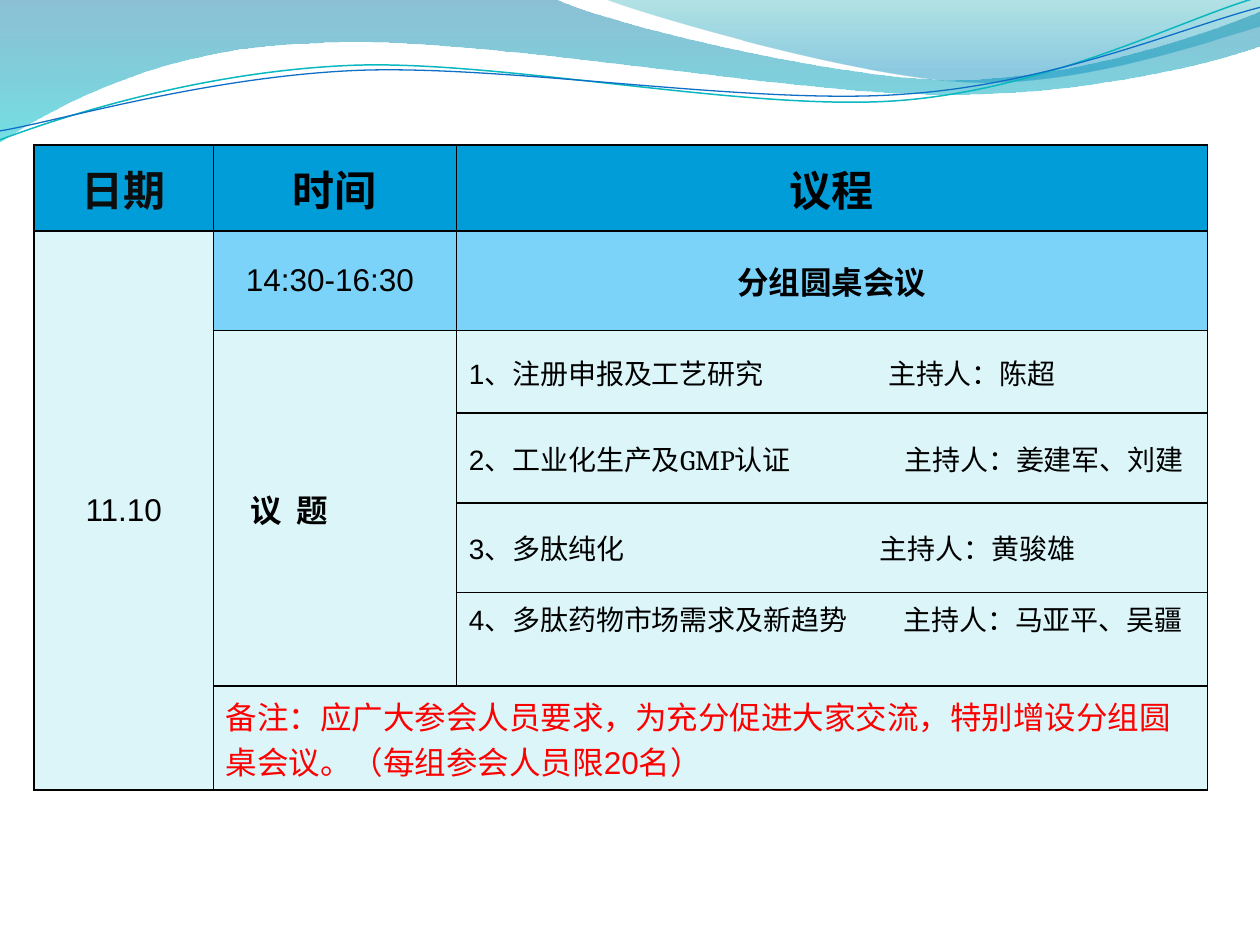
from dataclasses import dataclass

from lxml.etree import SubElement
from pptx import Presentation
from pptx.dml.color import RGBColor as Color
from pptx.enum.text import MSO_ANCHOR as Anchor, PP_ALIGN as Align
from pptx.oxml.ns import qn
from pptx.util import Cm, Pt


@dataclass(frozen=True)
class Theme:
    """Colours, fonts and type sizes of the slide."""
    header: str = "009DD9"
    session: str = "7CD3FA"
    body: str = "DBF5F9"
    text: str = "000000"
    date_text: str = "0D0D0D"
    note_text: str = "FF0000"
    sans: str = "Arial"
    serif: str = "Cambria"
    header_size: int = 24
    body_size: int = 18
    topic_size: int = 16


THEME = Theme()

HEADERS = [("日期", THEME.date_text), ("时间", THEME.text), ("议程", THEME.text)]
DATE, TIME, SESSION, TOPIC_LABEL = "11.10", "14:30-16:30", "分组圆桌会议", "议  题"
TOPICS = [
    ("1、", "注册申报及工艺研究", "陈超", 8.45),
    ("2、", "工业化生产及GMP认证", "姜建军、刘建", 8.78),
    ("3、", "多肽纯化", "黄骏雄", 8.28),
    ("4、", "多肽药物市场需求及新趋势", "马亚平、吴疆", 8.76),
]
NOTE = "备注：应广大参会人员要求，为充分促进大家交流，特别增设分组圆桌会议。（每组参会人员限20名）"

TABLE_LEFT, TABLE_TOP = 0.69, 2.92
COLUMNS = [3.61, 4.9, 15.14]
ROWS = [1.74, 2, 1.67, 1.81, 1.8, 1.89, 2.1]
MERGES = [((1, 0), (6, 0)), ((2, 1), (5, 1)), ((6, 1), (6, 2))]

BANDS = [
    ([(0, 0), (11.18, -0.03), (12.09, 0.43, 16.87, 1.6, 19.25, 1.6),
      (21.67, 1.6, 24.33, 0.66, 25.4, 0.23), (25.43, 0.91),
      (24.97, 1.12, 22.1, 1.93, 18.95, 1.9), (15.8, 1.9, 9.7, 0.71, 6.53, 0.86),
      (3.28, 0.91, 1.17, 2.11, -0.03, 2.87)],
     [(0, "0074A1", 45), (1, "00C6CF", 55)]),
    ([(12.17, -0.03), (12.93, 0.28, 17.32, 1.57, 19.53, 1.65),
      (21.74, 1.75, 24.41, 0.81, 25.4, 0.53), (25.4, 0)],
     [(0, "00A1A9", 30), (0.8, "008BBF", 45)]),
]
STRANDS = [
    ([(0, 2.82), (1.22, 2.36, 4.01, 1.45, 7.04, 1.32),
      (10.03, 1.19, 15.06, 2.26, 18.11, 2.03), (21.16, 1.8, 23.83, 0.38, 25.35, -0.05)],
     "0AB8BF", 0.85),
    ([(0, 2.64), (1.19, 2.44, 4.17, 1.55, 7.19, 1.42),
      (10.24, 1.3, 15.16, 2.13, 18.21, 1.9), (21.23, 1.7, 23.9, 0.53, 25.4, 0.15)],
     "0F6FC6", 0.75),
]


def add_wave(slide, segments, close):
    points = [(Cm(x), Cm(y)) for segment in segments
              for x, y in zip(segment[::2], segment[1::2])]
    builder = slide.shapes.build_freeform(*points[0])
    builder.add_line_segments(points[1:], close=close)
    shape = builder.convert_to_shape()
    shape.shadow.inherit = False
    lines = iter(list(shape.element.iter(qn("a:lnTo"))))
    for segment in segments[1:]:
        first = next(lines)
        if len(segment) == 6:
            first.tag = qn("a:cubicBezTo")
            for line in (next(lines), next(lines)):
                first.append(line[0])
                line.getparent().remove(line)
    return shape


def add_band(slide, segments, stops):
    shape = add_wave(slide, segments, True)
    shape.line.fill.background()
    shape.fill.gradient()
    shape.fill.gradient_angle = 270
    for stop, (position, color, opacity) in zip(shape.fill.gradient_stops, stops):
        stop.position = position
        stop.color.rgb = Color.from_string(color)
    for element, (_, _, opacity) in zip(shape.element.iter(qn("a:srgbClr")), stops):
        SubElement(element, qn("a:alpha"), val=str(opacity * 1000))


def add_strand(slide, segments, color, width):
    shape = add_wave(slide, segments, False)
    shape.fill.background()
    shape.line.color.rgb = Color.from_string(color)
    shape.line.width = Pt(width)


def add_borders(cell):
    properties = cell._tc.get_or_add_tcPr()
    for side in ("lnL", "lnR", "lnT", "lnB"):
        line = SubElement(properties, qn(f"a:{side}"), w=str(Pt(1)))
        fill = SubElement(line, qn("a:solidFill"))
        SubElement(fill, qn("a:srgbClr"), val=THEME.text)


def write(cell, runs, size, color=THEME.text, bold=False, align=Align.LEFT):
    cell.vertical_anchor = Anchor.MIDDLE
    paragraph = cell.text_frame.paragraphs[0]
    paragraph.alignment = align
    font = paragraph.font
    font.size, font.bold = Pt(size), bold
    font.color.rgb = Color.from_string(color)
    if len(runs) == 1:
        font.name = runs[0][1]
    for text, name in runs:
        run = paragraph.add_run()
        run.text = text
        if len(runs) > 1:
            run.font.name = name
    return paragraph


def add_tab(paragraph, position):
    properties = paragraph._p.get_or_add_pPr()
    tabs = SubElement(properties, qn("a:tabLst"))
    SubElement(tabs, qn("a:tab"), pos=str(Cm(position)), algn="l")
    properties.find(qn("a:defRPr")).addprevious(tabs)


def add_agenda(slide):
    frame = slide.shapes.add_table(len(ROWS), len(COLUMNS), Cm(TABLE_LEFT), Cm(TABLE_TOP),
                                   Cm(sum(COLUMNS)), Cm(sum(ROWS)))
    table = frame.table
    table.first_row = table.horz_banding = False
    for column, width in zip(table.columns, COLUMNS):
        column.width = Cm(width)
    for row, height in zip(table.rows, ROWS):
        row.height = Cm(height)
    for row in range(len(ROWS)):
        for column in range(len(COLUMNS)):
            cell = table.cell(row, column)
            add_borders(cell)
            color = (THEME.header if row == 0 else
                     THEME.session if row == 1 and column else THEME.body)
            cell.fill.solid()
            cell.fill.fore_color.rgb = Color.from_string(color)
    for first, last in MERGES:
        table.cell(*first).merge(table.cell(*last))

    for column, (text, color) in enumerate(HEADERS):
        write(table.cell(0, column), [(text, THEME.serif)], THEME.header_size, color,
              True, Align.CENTER)
    for column, (text, bold) in enumerate([(DATE, False), (TIME, False), (SESSION, True)]):
        write(table.cell(1, column), [(text, THEME.sans)], THEME.body_size,
              bold=bold, align=Align.CENTER)
    table.cell(1, 1).margin_right = Cm(0.45)
    label = table.cell(2, 1)
    label.margin_left = Cm(0.75)
    write(label, [(TOPIC_LABEL, THEME.sans)], THEME.body_size, bold=True)
    for row, (number, topic, host, position) in enumerate(TOPICS, 2):
        runs = [(number, THEME.sans), (f"{topic}\t主持人：{host}", THEME.serif)]
        add_tab(write(table.cell(row, 2), runs, THEME.topic_size), position)
    table.cell(5, 2).vertical_anchor = Anchor.TOP
    write(table.cell(6, 1), [(NOTE, THEME.sans)], THEME.body_size, THEME.note_text)


def main():
    """Build the meeting agenda slide with its wave banner."""
    presentation = Presentation()
    presentation.slide_width, presentation.slide_height = Cm(25.4), Cm(19.05)
    slide = presentation.slides.add_slide(presentation.slide_layouts[6])
    for band in BANDS:
        add_band(slide, *band)
    for strand in STRANDS:
        add_strand(slide, *strand)
    add_agenda(slide)
    presentation.save("out.pptx")


if __name__ == "__main__":
    main()
